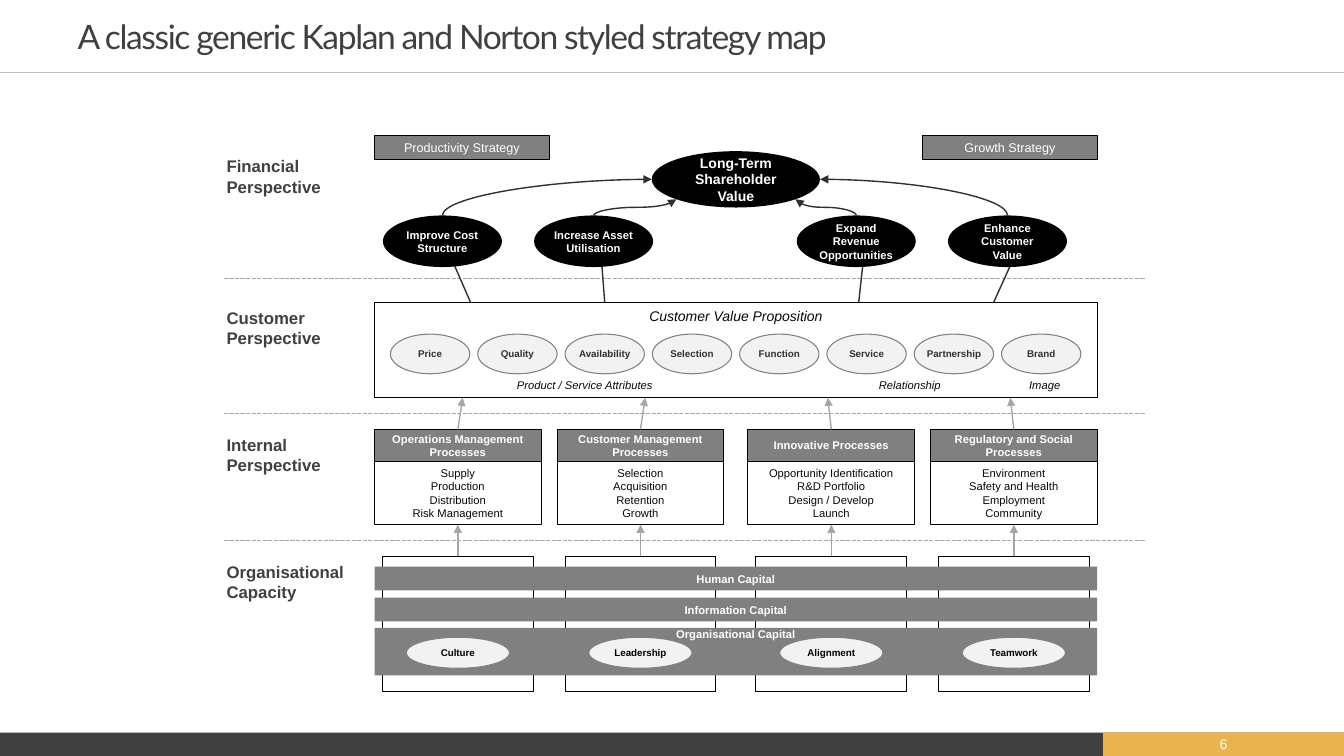
from lxml.etree import SubElement
from pptx import Presentation
from pptx.dml.color import RGBColor
from pptx.enum.dml import MSO_LINE
from pptx.enum.shapes import MSO_CONNECTOR, MSO_SHAPE
from pptx.enum.text import MSO_ANCHOR, PP_ALIGN
from pptx.oxml.ns import qn
from pptx.util import Cm, Pt

RECT, OVAL = MSO_SHAPE.RECTANGLE, MSO_SHAPE.OVAL
BLACK, WHITE, INK, TEXT = "000000", "FFFFFF", "2E3037", "080808"
DARK, GREY, SILVER, PALE, GOLD = "404040", "808080", "A6A6A6", "F2F2F2", "EBB250"
MAP_X, MAP_W = 9.44, 18.21
COLUMN_OFFSETS = (0, 4.6, 9.41, 14.01)
COLUMN_W = 4.2


def rgb(value):
    return RGBColor.from_string(value)


def write(sp, text, size, color, bold=False, italic=False,
          align=PP_ALIGN.CENTER, anchor=MSO_ANCHOR.MIDDLE):
    tf = sp.text_frame
    tf.word_wrap = True
    tf.vertical_anchor = anchor
    tf.text = text
    for p in tf.paragraphs:
        p.alignment = align
        p.font.name, p.font.size = "Arial", Pt(size)
        p.font.bold, p.font.italic = bold, italic
        p.font.color.rgb = rgb(color)
    return tf


def add_box(slide, kind, x, y, w, h, fill=None, line=None, alpha=None):
    sp = slide.shapes.add_shape(kind, Cm(x), Cm(y), Cm(w), Cm(h))
    sp.shadow.inherit = False
    if fill:
        sp.fill.solid()
        sp.fill.fore_color.rgb = rgb(fill)
    else:
        sp.fill.background()
    if alpha:
        color = sp._element.spPr.find(qn("a:solidFill")).find(qn("a:srgbClr"))
        SubElement(color, qn("a:alpha"), val=str(alpha * 1000))
    if line:
        sp.line.color.rgb = rgb(line)
        sp.line.width = Pt(0.75)
    else:
        sp.line.fill.background()
    return sp


def add_oval(slide, x, y, w, h, text, size, color, fill, line=None):
    sp = add_box(slide, OVAL, x, y, w, h, fill, line)
    tf = write(sp, text, size, color, bold=True)
    tf.margin_left = tf.margin_right = 0


def add_text(slide, x, y, w, h, text, size, color, **style):
    sp = slide.shapes.add_textbox(Cm(x), Cm(y), Cm(w), Cm(h))
    write(sp, text, size, color, anchor=MSO_ANCHOR.TOP, **style)


def add_line(slide, x1, y1, x2, y2, color, arrow=False, dashed=False,
             kind=MSO_CONNECTOR.STRAIGHT):
    cxn = slide.shapes.add_connector(kind, Cm(x1), Cm(y1), Cm(x2), Cm(y2))
    cxn.line.color.rgb = rgb(color)
    cxn.line.width = Pt(1)
    if dashed:
        cxn.line.dash_style = MSO_LINE.SQUARE_DOT
    spPr = cxn._element.spPr
    if arrow:
        SubElement(spPr.find(qn("a:ln")), qn("a:tailEnd"), type="triangle")
    SubElement(spPr, qn("a:effectLst"))
    return spPr


def add_rising_curve(slide, x1, y1, x2, y2, preset):
    """Curved arrow that leaves (x1, y1) upwards: a quarter-turned connector."""
    cx, cy = (x1 + x2) / 2, (y1 + y2) / 2
    half_w, half_h = abs(y2 - y1) / 2, abs(x2 - x1) / 2
    spPr = add_line(slide, cx - half_w, cy - half_h, cx + half_w, cy + half_h,
                    INK, arrow=True, kind=MSO_CONNECTOR.CURVE)
    spPr.find(qn("a:prstGeom")).set("prst", preset)
    xfrm = spPr.find(qn("a:xfrm"))
    xfrm.set("flipV", "1")
    if x2 > x1:
        xfrm.set("flipH", "1")
    xfrm.set("rot", str((90 if x2 > x1 else 270) * 60000))


def add_frame(slide, w, h, title):
    """Title, rule below it, footer bar and page number."""
    sp = slide.shapes.title
    sp.left, sp.top, sp.width, sp.height = Cm(1.7), Cm(0.1), Cm(24.7), Cm(1.6)
    tf = write(sp, title, 24, DARK, align=PP_ALIGN.LEFT)
    tf.margin_top = tf.margin_bottom = 0
    p = tf.paragraphs[0]
    p.font.name = "Lato"
    p.runs[0]._r.get_or_add_rPr().set("spc", "-100")
    add_line(slide, 0, 1.82, w, 1.82, "BFBFBF")
    add_box(slide, RECT, 0, h - 0.59, w, 0.59, DARK)
    sp = add_box(slide, RECT, w - 6.07, h - 0.59, 6.07, 0.59, GOLD)
    write(sp, "6", 10, WHITE)


def add_financial(slide, x, y, w, floor):
    """Strategies, drivers and hub; the drivers stand on lines from floor."""
    tag_w = 4.4
    for left, text in ((x, "Productivity Strategy"), (x + w - tag_w, "Growth Strategy")):
        sp = add_box(slide, RECT, left, y - 0.39, tag_w, 0.6, GREY, BLACK)
        write(sp, text, 9, WHITE)

    hub_w, hub_h = 4.24, 1.42
    hub_x, hub_y = x + w / 2, y + hub_h / 2
    diagonal = 0.5 ** 0.5
    side, corner = hub_w / 2, hub_w / 2 * diagonal
    corner_y = hub_y + hub_h / 2 * diagonal
    driver_y, driver_w, driver_h = y + 1.62, 3, 1.3
    drivers = (
        ("Improve Cost Structure", 0.21, 2.42, hub_x - side, hub_y, "curvedConnector2"),
        ("Increase Asset Utilisation", 4.02, 5.8, hub_x - corner, corner_y, "curvedConnector3"),
        ("Expand Revenue Opportunities", 10.64, 12.2, hub_x + corner, corner_y, "curvedConnector3"),
        ("Enhance Customer Value", 14.45, 15.6, hub_x + side, hub_y, "curvedConnector2"),
    )
    for text, dx, foot, end_x, end_y, preset in drivers:
        center = x + dx + driver_w / 2
        add_line(slide, x + foot, floor, center + 0.19, driver_y + 1, INK, arrow=True)
        add_oval(slide, x + dx, driver_y, driver_w, driver_h, text, 8, WHITE, BLACK)
        add_rising_curve(slide, center, driver_y, end_x, end_y, preset)
    add_oval(slide, hub_x - side, y, hub_w, hub_h,
             "Long-Term Shareholder Value", 10, WHITE, BLACK)


def add_customer(slide, x, y, w):
    sp = add_box(slide, RECT, x, y, w, 2.4, line=BLACK)
    write(sp, "Customer Value Proposition", 10, TEXT, italic=True, anchor=MSO_ANCHOR.TOP)
    values = ("Price", "Quality", "Availability", "Selection",
              "Function", "Service", "Partnership", "Brand")
    for i, value in enumerate(values):
        add_oval(slide, x + 0.4 + 2.2 * i, y + 0.8, 2, 1, value, 7, INK, PALE, GREY)
    for text, dx, text_w in (("Product / Service Attributes", 2.8, 5),
                             ("Relationship", 12.4, 2.18), ("Image", 15.8, 2.18)):
        add_text(slide, x + dx, y + 1.8, text_w, 0.6, text, 8, TEXT, italic=True)


def add_internal(slide, x, y):
    processes = (
        ("Operations Management Processes",
         "Supply\nProduction\nDistribution\nRisk Management"),
        ("Customer Management Processes",
         "Selection\nAcquisition\nRetention\nGrowth"),
        ("Innovative Processes",
         "Opportunity Identification\nR&D Portfolio\nDesign / Develop\nLaunch"),
        ("Regulatory and Social Processes",
         "Environment\nSafety and Health\nEmployment\nCommunity"),
    )
    for i, (dx, (head, steps)) in enumerate(zip(COLUMN_OFFSETS, processes)):
        sp = add_box(slide, RECT, x + dx, y, COLUMN_W, 0.8, GREY, BLACK)
        write(sp, head, 8, WHITE, bold=True)
        sp = add_box(slide, RECT, x + dx, y + 0.8, COLUMN_W, 1.6, WHITE, BLACK, 75)
        write(sp, steps, 8, TEXT)
        add_line(slide, x + dx + COLUMN_W / 2, y, x + 2.22 + 4.6 * i, y - 0.8, SILVER, arrow=True)


def add_capacity(slide, x, y, w):
    frame_w, oval_w = 3.8, 2.6
    centers = [x + dx + COLUMN_W / 2 for dx in COLUMN_OFFSETS]
    for center in centers:
        add_box(slide, RECT, center - frame_w / 2, y, frame_w, 3.4, WHITE, BLACK, 75)
        add_line(slide, center, y, center, y - 0.8, SILVER, arrow=True)
    for text, dy, h in (("Human Capital", 0.26, 0.6), ("Information Capital", 1.04, 0.6),
                        ("Organisational Capital", 1.8, 1.2)):
        sp = add_box(slide, RECT, x, y + dy, w, h, GREY)
        tf = write(sp, text, 8, WHITE, bold=True)
    tf.vertical_anchor = MSO_ANCHOR.TOP
    tf.margin_top = 0
    for center, text in zip(centers, ("Culture", "Leadership", "Alignment", "Teamwork")):
        add_oval(slide, center - oval_w / 2, y + 2.04, oval_w, 0.78, text, 7, BLACK, PALE, GREY)


def main():
    prs = Presentation()
    prs.slide_width, prs.slide_height = Cm(33.87), Cm(19.05)
    slide = prs.slides.add_slide(prs.slide_layouts[5])
    add_frame(slide, 33.87, 19.05, "A classic generic Kaplan and Norton styled strategy map")
    financial_y, customer_y, internal_y, capacity_y = 3.81, 7.62, 10.82, 14.02
    for y in (customer_y - 0.6, internal_y - 0.4, capacity_y - 0.4):
        add_line(slide, 5.64, y, 28.86, y, SILVER, dashed=True)
    for y, label in ((financial_y, "Financial\vPerspective"),
                     (customer_y, "Customer\vPerspective"),
                     (internal_y, "Internal\vPerspective"),
                     (capacity_y, "Organisational\vCapacity")):
        add_text(slide, 5.46, y, 5, 1.28, label, 12, DARK, bold=True, align=PP_ALIGN.LEFT)
    add_financial(slide, MAP_X, financial_y, MAP_W, customer_y)
    add_customer(slide, MAP_X, customer_y, MAP_W)
    add_internal(slide, MAP_X, internal_y)
    add_capacity(slide, MAP_X, capacity_y, MAP_W)
    prs.save("out.pptx")


if __name__ == "__main__":
    main()
